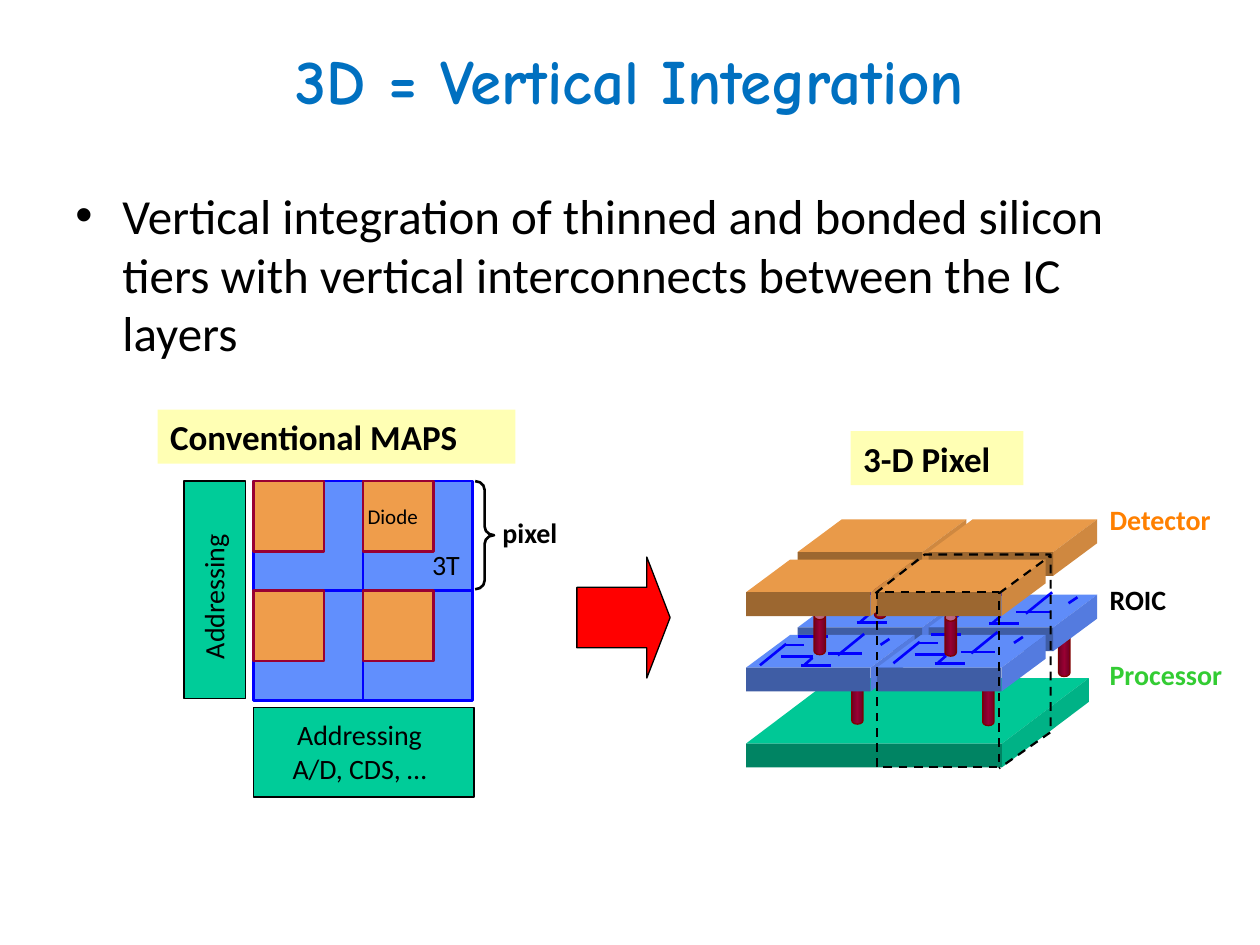
from copy import deepcopy
from dataclasses import dataclass

from lxml import etree
from pptx import Presentation
from pptx import util as u
from pptx.dml.color import RGBColor
from pptx.enum import dml, shapes, text
from pptx.oxml.ns import qn

Cm, Pt = u.Cm, u.Pt
Kind = shapes.MSO_SHAPE
Align = text.PP_ALIGN


@dataclass(frozen=True)
class Theme:
    head: str = "Comic Neue"
    body: str = "Calibri"
    title: int = 36
    lead: int = 28
    label: int = 20
    note: int = 16
    tiny: int = 12
    black: str = "000000"
    sky: str = "0070C0"
    cream: str = "FFFFB4"
    blue: str = "618FFD"
    wire: str = "0000FF"
    tan: str = "EF9D4B"
    wine: str = "990033"
    dark: str = "6D0024"
    rim: str = "800000"
    green: str = "00CC99"
    red: str = "FF0000"
    amber: str = "FF8000"
    lime: str = "33CC33"
    # Slab faces: top, front, side
    det: tuple = ("E99A49", "9C6730", "CF8840")
    roic: tuple = ("5F8CF9", "3F5DA5", "547BDF")
    proc: tuple = ("00C896", "008463", "00B286")


T = Theme()
THICK = 0.48
WIDE = 2.51
DEPTH = (0.89, 0.66)

# Wiring of one readout tile: x1, y1, x2, y2
WIRES = {
    "A": (16.89, 13.21, 17.42, 12.78),
    "B": (16.69, 13.18, 17.37, 13.18),
    "C": (15.32, 13.41, 15.85, 12.98),
    "D": (15.8, 13, 16.21, 13),
    "E": (15.75, 13.23, 16.38, 13.23),
    "F": (16.21, 13.41, 16.38, 13.26),
    "G": (16.15, 13.41, 16.76, 13.41),
    "H": (16.08, 12.83, 16.69, 12.83),
    "I": (17.75, 13, 17.93, 12.88),
}


def rgb(code):
    return RGBColor.from_string(code)


def paint(item, fill=None, edge=None, width=0.75, dash=False):
    item.shadow.inherit = False
    if fill:
        item.fill.solid()
        item.fill.fore_color.rgb = rgb(fill)
    else:
        item.fill.background()
    if edge:
        stroke(item.line, edge, width, dash)
    else:
        item.line.fill.background()


def stroke(line, color, width, dash=False):
    line.color.rgb = rgb(color)
    line.width = Pt(width)
    if dash:
        line.dash_style = dml.MSO_LINE.DASH


def write(frame, words, size, color=T.black, bold=False, align=Align.LEFT, font=T.body):
    frame.text = words
    frame.word_wrap = True
    for para in frame.paragraphs:
        para.alignment = align
        for run in para.runs:
            run.font.name, run.font.size = font, Pt(size)
            run.font.bold = bold
            run.font.color.rgb = rgb(color)


def shape(pool, kind, box, fill=None, edge=None, width=0.75, dash=False):
    item = pool.add_shape(kind, *map(Cm, box))
    paint(item, fill, edge, width, dash)
    return item


def note(pool, words, box, size=T.note, **look):
    item = pool.add_textbox(*map(Cm, box))
    write(item.text_frame, words, size, **look)
    return item


def badge(pool, words, box):
    item = shape(pool, Kind.RECTANGLE, box, T.cream)
    write(item.text_frame, words, T.label, bold=True)


def line(pool, ends, color, width, dash=False):
    item = pool.add_connector(shapes.MSO_CONNECTOR.STRAIGHT, *map(Cm, ends))
    stroke(item.line, color, width, dash)
    etree.SubElement(item._element.spPr, qn("a:effectLst"))


def poly(pool, points, close=True, **look):
    first, *rest = [(Cm(x), Cm(y)) for x, y in points]
    pen = pool.build_freeform(*first)
    pen.add_line_segments(rest, close=close)
    paint(pen.convert_to_shape(), **look)


def slab(pool, x, y, faces, wide=WIDE, depth=DEPTH):
    dx, dy = depth
    right, base = x + wide, y + THICK
    top, front, side = faces
    poly(pool, [(x, y), (x + dx, y - dy), (right + dx, y - dy), (right, y)], fill=top)
    poly(pool, [(right, y), (right + dx, y - dy), (right + dx, base - dy), (right, base)], fill=side)
    shape(pool, Kind.RECTANGLE, (x, y, wide, THICK), front)


def post(pool, x, y):
    item = shape(pool, Kind.CAN, (x, y, 0.23, 0.86), T.wine, T.rim)
    item.adjustments[0] = 0.67
    item.fill.gradient()
    item.fill.gradient_angle = 0
    stops = item.fill._xPr.find(qn("a:gradFill")).find(qn("a:gsLst"))
    stops.append(deepcopy(stops[0]))
    for stop, color, spot in zip(item.fill.gradient_stops, (T.dark, T.wine, T.dark), (0, 0.5, 1)):
        stop.color.rgb = rgb(color)
        stop.position = spot


def wires(pool, dx, dy, names):
    for name in names:
        x1, y1, x2, y2 = WIRES[name]
        line(pool, (x1 + dx, y1 + dy, x2 + dx, y2 + dy), T.wire, 1.5)


def bullet(para):
    props = para._p.get_or_add_pPr()
    props.set("marL", str(Cm(0.95)))
    props.set("indent", str(-Cm(0.95)))
    etree.SubElement(props, qn("a:buFont"), typeface="Arial")
    etree.SubElement(props, qn("a:buChar"), char="•")


def maps(pool):
    # Two by two pixel grid, each with a diode
    left, top, pitch, diode = 5.11, 9.7, 2.21, 1.42
    for row in range(2):
        for col in range(2):
            x, y = left + col * pitch, top + row * pitch
            shape(pool, Kind.RECTANGLE, (x, y, pitch, pitch), T.blue, T.wire, 1.5)
            shape(pool, Kind.RECTANGLE, (x, y, diode, diode), T.tan, T.wine, 1.5)
    # Addressing blocks
    shape(pool, Kind.RECTANGLE, (left, 14.27, 4.45, 1.8), T.green, T.black)
    shape(pool, Kind.RECTANGLE, (3.71, top, 1.24, 4.39), T.green, T.black)
    # Labels
    badge(pool, "Conventional MAPS", (3.18, 8.26, 7.21, 1.09))
    brace = shape(pool, Kind.RIGHT_BRACE, (9.58, top, 0.38, 2.18), edge=T.black, width=1.5)
    brace.adjustments[0] = 0.46
    note(pool, "pixel", (9.88, 10.26, 1.8, 0.94), bold=True)
    note(pool, "Addressing\nA/D, CDS, …", (5.33, 14.35, 3.84, 1.63), align=Align.CENTER)
    note(pool, "Addressing", (2.64, 11.4, 3.33, 0.94)).rotation = 270
    note(pool, "Diode", (7.16, 10.03, 1.6, 0.76), T.tiny)
    note(pool, "3T", (8.46, 10.92, 1.17, 0.94))


def stack(pool):
    near, far = (15.04, 17.68), (16.08, 18.72)
    badge(pool, "3-D Pixel", (17.15, 8.69, 3.48, 1.09))
    # Processor tier and its posts
    slab(pool, near[0], 14.99, T.proc, 5.16, (1.75, 1.32))
    for x, y in ((21.34, 12.78), (17.17, 13.74), (19.81, 13.77)):
        post(pool, x, y)
    # Readout tier, back row first
    for row, y in ((far, 12.65), (near, 13.46)):
        for x in row:
            slab(pool, x, y, T.roic)
    wires(pool, 0, 0, "ABCDEFGHI")
    wires(pool, 3.79, -0.84, "ABCEFGHI")
    wires(pool, 1.12, -0.86, "ACEFGH")
    wires(pool, 2.69, -0.04, "ABCDEFGHI")
    # Detector tier and its posts
    post(pool, 17.63, 11.61)
    for x in far:
        slab(pool, x, 11.13, T.det)
    for x, y in ((16.41, 12.34), (19.05, 12.37)):
        post(pool, x, y)
    for x in near:
        slab(pool, x, 11.94, T.det)
    # Dashed outline of one pixel column
    dashed = dict(edge=T.black, width=1.25, dash=True)
    shape(pool, Kind.RECTANGLE, (near[1], 11.94, 2.46, 3.53), **dashed)
    poly(pool, [(17.65, 11.96), (18.64, 11.18), (21.18, 11.18), (21.18, 14.76), (20.14, 15.49)],
         close=False, **dashed)
    line(pool, (20.14, 11.96, 21.18, 11.2), T.black, 1.25, True)
    # Tier names
    for words, y, wide, color in (("Detector", 10.01, 2.79, T.amber),
                                  ("ROIC", 11.61, 1.93, T.black),
                                  ("Processor", 13.13, 3.28, T.lime)):
        note(pool, words, (22.12, y, wide, 0.94), color=color, bold=True)


def main():
    deck = Presentation()
    deck.slide_width, deck.slide_height = Cm(25.4), Cm(19.05)
    slide = deck.slides.add_slide(deck.slide_layouts[5])
    pool = slide.shapes

    # Title and lead text
    title = pool.title
    title.left, title.top, title.width, title.height = map(Cm, (1.27, 0, 22.86, 3.18))
    write(title.text_frame, "3D = Vertical Integration", T.title, T.sky, True, Align.CENTER, T.head)
    title.text_frame.vertical_anchor = text.MSO_ANCHOR.MIDDLE
    lead = note(pool, "Vertical integration of thinned and bonded silicon tiers "
                "with vertical interconnects between the IC layers",
                (1.27, 3.61, 22.86, 12.57), T.lead)
    bullet(lead.text_frame.paragraphs[0])

    # Flat design, stacked design and the arrow between them
    maps(pool.add_group_shape().shapes)
    stack(pool.add_group_shape().shapes)
    arrow = shape(pool, Kind.RIGHT_ARROW, (11.63, 11.23, 1.88, 2.44), T.red, T.black)
    arrow.adjustments[1] = 0.25

    deck.save("out.pptx")


if __name__ == "__main__":
    main()
